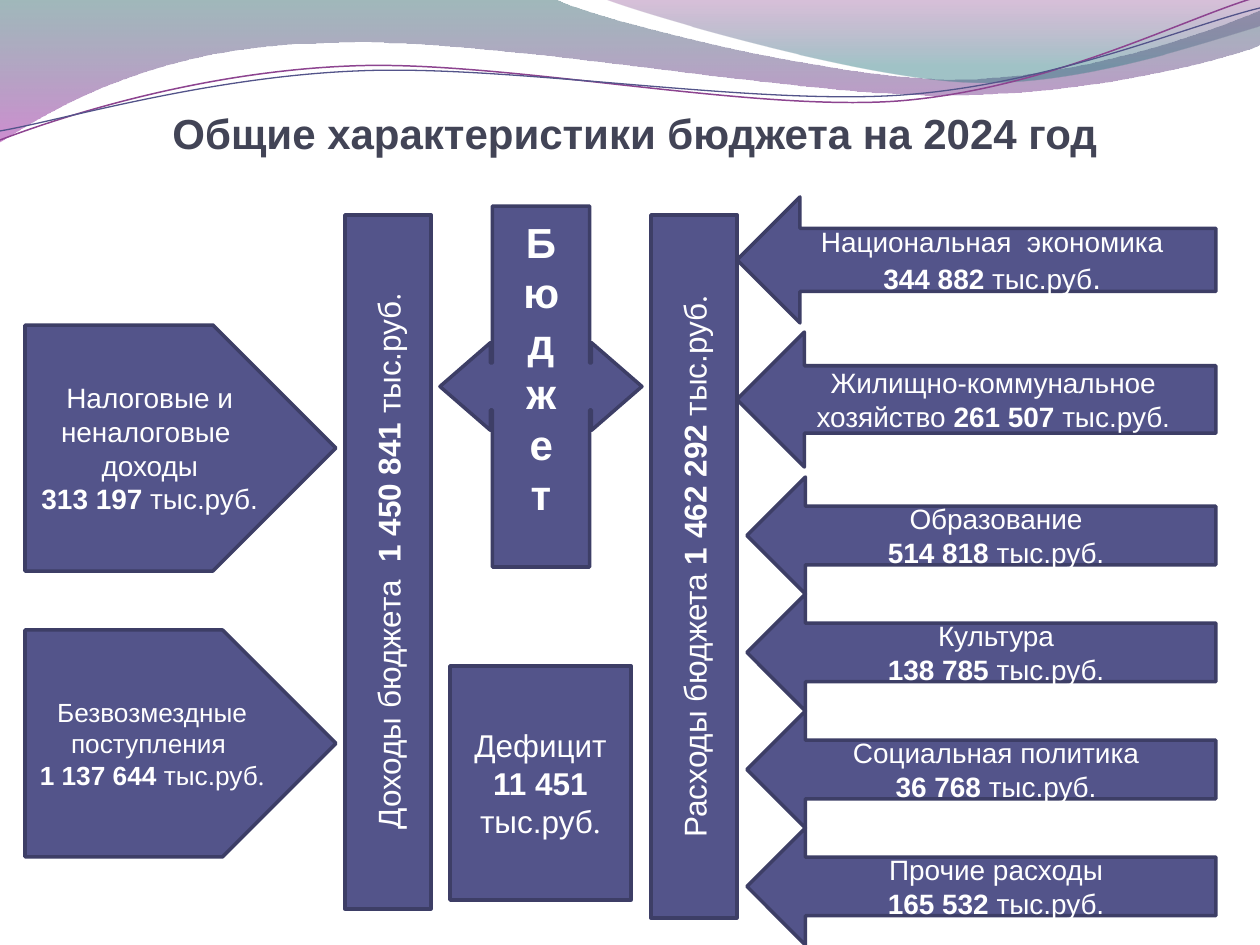
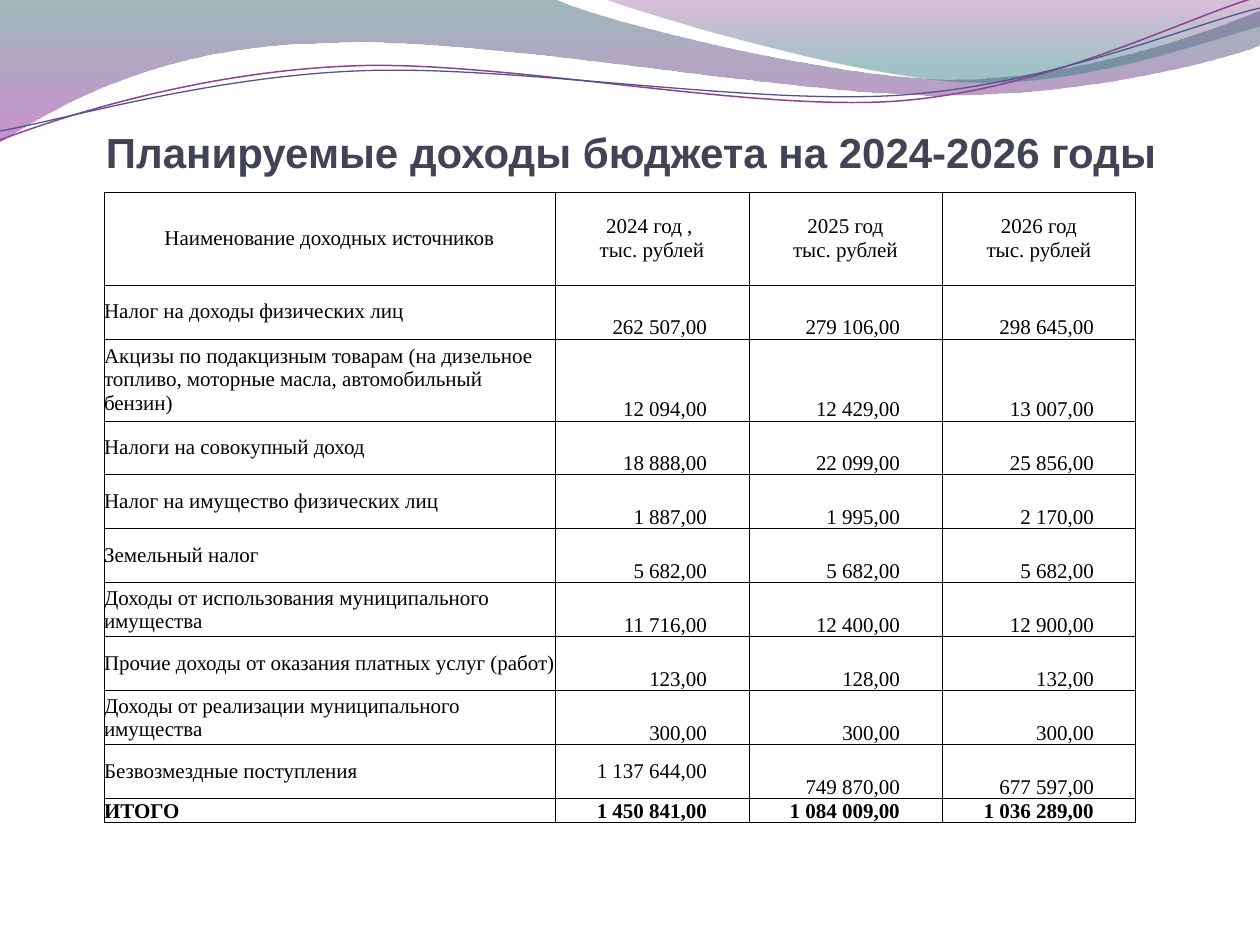
from lxml import etree
from pptx import Presentation
from pptx.dml.color import RGBColor
from pptx.enum.shapes import MSO_SHAPE
from pptx.enum.text import MSO_ANCHOR, MSO_AUTO_SIZE, PP_ALIGN
from pptx.oxml.ns import qn
from pptx.util import Pt

RECT, PENTAGON = MSO_SHAPE.RECTANGLE, MSO_SHAPE.PENTAGON
LEFT_ARROW, CALLOUT = MSO_SHAPE.LEFT_ARROW, MSO_SHAPE.LEFT_RIGHT_ARROW_CALLOUT
MIDDLE, BOTTOM = MSO_ANCHOR.MIDDLE, MSO_ANCHOR.BOTTOM
LEFT, CENTER, RIGHT = PP_ALIGN.LEFT, PP_ALIGN.CENTER, PP_ALIGN.RIGHT
FIXED = MSO_AUTO_SIZE.NONE

EMU = 914400 / 126
TITLE_ONLY = 5
SANS, SERIF = "Arial", "Times New Roman"
C = {
    "title": "424456", "block": "53548A", "edge": "3D3E66", "white": "FFFFFF",
    "black": "000000", "plum": "8D4490", "teal": "2D6368", "violet": "A530A9",
    "purple": "7F2F82", "aqua": "2F7B82",
}

# Waves: two coordinates make a straight segment, six make a Bezier curve
WAVE_BANDS = [
    ((0, 0), [(554, -1), (600, 21, 837, 79, 955, 79), (1075, 79, 1207, 33, 1260, 11),
              (1261, 45), (1239, 55, 1096, 96, 940, 95), (784, 95, 481, 35, 324, 43),
              (163, 45, 58, 105, -1, 142), (0, 0)],
     [(0, "teal", 45), (1, "violet", 55)]),
    ((604, -1), [(641, 14, 859, 78, 969, 82), (1079, 87, 1211, 40, 1260, 26), (1260, 0),
                 (604, -1)],
     [(0, "purple", 30), (0.8, "aqua", 45)]),
]
WAVE_LINES = [
    ((0, 140), [(60, 117, 199, 72, 349, 66), (498, 59, 747, 112, 898, 101),
                (1050, 89, 1182, 19, 1257, -3)], "plum", 0.85),
    ((0, 131), [(59, 121, 207, 77, 357, 71), (508, 64, 752, 106, 903, 95),
                (1053, 84, 1186, 26, 1260, 8)], "block", 0.75),
]


def px(n):
    return round(n * EMU)


def rgb(name):
    return RGBColor.from_string(C[name])


class Deck:
    def __init__(self):
        self.prs = Presentation()
        self.prs.slide_width, self.prs.slide_height = px(1260), px(945)
        self.layout = self.prs.slide_layouts[TITLE_ONLY]
        for ph in list(self.layout.placeholders):
            if ph.placeholder_format.idx:
                ph.element.getparent().remove(ph.element)
        self.slide = None

    def new_slide(self, title, box):
        first = self.slide is None
        self.slide = self.prs.slides.add_slide(self.layout)
        if first:
            self.waves()
        sp = self.slide.shapes.title
        sp.left, sp.top, sp.width, sp.height = map(px, box)
        tf = sp.text_frame
        frame = {"margin_left": 0, "margin_right": 0, "margin_top": px(6), "margin_bottom": 0,
                 "vertical_anchor": BOTTOM, "word_wrap": True, "auto_size": FIXED}
        for key, value in frame.items():
            setattr(tf, key, value)
        tf.paragraphs[0].alignment = CENTER
        self.run(tf.paragraphs[0], title, "title", size=24, bold=True)

    def run(self, p, text, color, **fmt):
        r = p.add_run()
        r.text = text
        fmt = {"name": SANS, "size": 18, "bold": False, **fmt}
        fmt["size"] = Pt(fmt["size"])
        for key, value in fmt.items():
            setattr(r.font, key, value)
        r.font.color.rgb = rgb(color)

    def waves(self):
        """Draw the waves once and hand them to the shared layout."""
        shapes = []
        for start, segments, stops in WAVE_BANDS:
            sp = self.outline(start, segments, True)
            sp.line.fill.background()
            sp.fill.gradient()
            sp.fill.gradient_angle = 270
            for stop, (position, color, _) in zip(sp.fill.gradient_stops, stops):
                stop.position = position
                stop.color.rgb = rgb(color)
            for clr, (_, _, opacity) in zip(sp.element.iter(qn("a:srgbClr")), stops):
                etree.SubElement(clr, qn("a:alpha"), val=str(opacity * 1000))
            shapes.append(sp)
        for start, segments, color, width in WAVE_LINES:
            sp = self.outline(start, segments, False)
            sp.fill.background()
            sp.line.color.rgb = rgb(color)
            sp.line.width = Pt(width)
            shapes.append(sp)
        for sp in shapes:
            self.layout.shapes.element.append(sp.element)

    def outline(self, start, segments, close):
        """A freeform whose six-number segments become Bezier curves."""
        builder = self.slide.shapes.build_freeform(*map(px, start))
        builder.add_line_segments([tuple(map(px, seg[-2:])) for seg in segments], close=close)
        sp = builder.convert_to_shape()
        sp.shadow.inherit = False
        for step, seg in zip(list(sp.element.iter(qn("a:lnTo"))), segments):
            if len(seg) == 6:
                step.tag = qn("a:cubicBezTo")
                for i in (0, 1):
                    x, y = px(seg[2 * i]) - sp.left, px(seg[2 * i + 1]) - sp.top
                    step.insert(i, etree.Element(qn("a:pt"), x=str(x), y=str(y)))
        return sp

    def block(self, kind, box, paragraphs, vert=None, adj=()):
        """A filled shape; each paragraph is a list of (text, format) runs."""
        sp = self.slide.shapes.add_shape(kind, *map(px, box))
        sp.shadow.inherit = False
        for i, value in enumerate(adj):
            sp.adjustments[i] = value
        sp.fill.solid()
        sp.fill.fore_color.rgb = rgb("block")
        sp.line.color.rgb = rgb("edge")
        sp.line.width = Pt(2)
        tf = sp.text_frame
        tf.word_wrap = True
        tf.vertical_anchor = MIDDLE
        if vert:
            sp.element.txBody.find(qn("a:bodyPr")).set("vert", vert)
        for i, runs in enumerate(paragraphs):
            p = tf.add_paragraph() if i else tf.paragraphs[0]
            p.alignment = CENTER
            for text, fmt in runs:
                self.run(p, text, "white", **fmt)

    def sum_block(self, kind, box, label, amount, size, joined=False, dot=None, vert=None):
        """A block with a label and a sum, on one paragraph or two."""
        plain = {"size": size}
        head = [(label, plain)]
        total = [(amount + " ", {"size": size, "bold": True}), ("тыс.руб", plain),
                 (".", {**plain, **(dot or {})})]
        self.block(kind, box, [head + total] if joined else [head, total], vert)

    def table(self, left, top, widths, heights, rows, style):
        shape = self.slide.shapes.add_table(len(rows), len(widths), px(left), px(top),
                                            px(sum(widths)), px(sum(heights)))
        table = shape.table
        table.first_row = table.horz_banding = False
        for col, width in zip(table.columns, widths):
            col.width = px(width)
        for row, height in zip(table.rows, heights):
            row.height = px(height)
        for i, row in enumerate(rows):
            for j, text in enumerate(row):
                self.cell(table.cell(i, j), text, **style(i, j))

    def cell(self, cell, text, anchor, align, bold, right):
        tc_pr = cell._tc.get_or_add_tcPr()
        for side in ("lnL", "lnR", "lnT", "lnB"):
            ln = etree.SubElement(tc_pr, qn("a:" + side), w=str(Pt(0.5)))
            fill = etree.SubElement(ln, qn("a:solidFill"))
            etree.SubElement(fill, qn("a:srgbClr"), val=C["black"])
        cell.fill.background()
        frame = {"margin_left": 0, "margin_top": 0, "margin_bottom": 0,
                 "margin_right": px(right), "vertical_anchor": anchor}
        for key, value in frame.items():
            setattr(cell, key, value)
        tf = cell.text_frame
        for i, line in enumerate(text.split("\n")):
            p = tf.add_paragraph() if i else tf.paragraphs[0]
            p.alignment = align
            self.run(p, line, "black", name=SERIF, size=12, bold=bold)


def budget_slide(deck):
    deck.new_slide("Общие характеристики бюджета на 2024 год", (63, 79, 1144, 79))

    # Centre: budget, its two columns and the deficit
    deck.block(CALLOUT, (440, 206, 202, 361),
               [[("Бюджет", {"size": 24, "bold": True}), (" ", {"name": SERIF})]],
               vert="wordArtVert", adj=(0.233, 0.217, 0.25, 0.481))
    deck.sum_block(RECT, (345, 215, 86, 694), "Доходы бюджета  ", "1 450 841", 18,
                   joined=True, dot={"name": "Cambria"}, vert="vert270")
    deck.sum_block(RECT, (651, 215, 86, 703), "Расходы бюджета ", "1 462 292", 18,
                   joined=True, dot={"name": SERIF}, vert="vert270")
    deck.sum_block(RECT, (450, 666, 181, 234), "Дефицит ", "11 451", 18,
                   joined=True, dot={"name": SERIF})

    # Income sources
    deck.sum_block(PENTAGON, (25, 325, 311, 246), "Налоговые и неналоговые  доходы",
                   "313 197", 16)
    deck.sum_block(PENTAGON, (25, 630, 311, 227), "Безвозмездные поступления ",
                   "1 137 644", 15, dot={"name": SERIF})

    # Spending items
    deck.sum_block(LEFT_ARROW, (737, 197, 479, 126), "Национальная  экономика",
                   "344 882", 16, dot={"size": 18})
    deck.sum_block(LEFT_ARROW, (737, 332, 479, 135), "Жилищно-коммунальное хозяйство ",
                   "261 507", 16, joined=True)
    spending = [("Образование", "514 818"), ("Культура", "138 785"),
                ("Социальная политика", "36 768"), ("Прочие расходы", "165 532")]
    for i, (label, amount) in enumerate(spending):
        deck.sum_block(LEFT_ARROW, (747, 477 + 117 * i, 469, 117), label, amount, 16)


def income_slide(deck):
    deck.new_slide("Планируемые доходы бюджета на 2024-2026 годы", (59, 89, 1144, 88))
    rows = [
        ("Наименование доходных источников", "2024 год , \nтыс. рублей",
         "2025 год\nтыс. рублей", "2026 год\nтыс. рублей"),
        ("Налог на доходы физических лиц", "262 507,00", "279 106,00", "298 645,00"),
        ("Акцизы по подакцизным товарам (на дизельное топливо, моторные масла, "
         "автомобильный бензин)", "12 094,00", "12 429,00", "13 007,00"),
        ("Налоги на совокупный доход", "18 888,00", "22 099,00", "25 856,00"),
        ("Налог на имущество физических лиц", "1 887,00", "1 995,00", "2 170,00"),
        ("Земельный налог", "5 682,00", "5 682,00", "5 682,00"),
        ("Доходы от использования муниципального имущества",
         "11 716,00", "12 400,00", "12 900,00"),
        ("Прочие доходы от оказания платных услуг (работ)", "123,00", "128,00", "132,00"),
        ("Доходы от реализации муниципального имущества", "300,00", "300,00", "300,00"),
        ("Безвозмездные поступления", "1 137 644,00", "749 870,00", "677 597,00"),
        ("ИТОГО", "1 450 841,00", "1 084 009,00", "1 036 289,00"),
    ]
    last = len(rows) - 1

    def style(i, j):
        head, number = i == 0, i > 0 and j > 0
        low = i == last or (number and (i, j) != (last - 1, 1))
        return {"anchor": BOTTOM if low else MIDDLE,
                "align": CENTER if head else RIGHT if number else LEFT,
                "bold": i == last, "right": 42 if number else 0}

    heights = [93, 54, 82] + [54] * 7 + [24]
    deck.table(104, 192, [451, 194, 193, 194], heights, rows, style)


def main():
    deck = Deck()
    budget_slide(deck)
    income_slide(deck)
    deck.prs.save("out.pptx")


if __name__ == "__main__":
    main()
